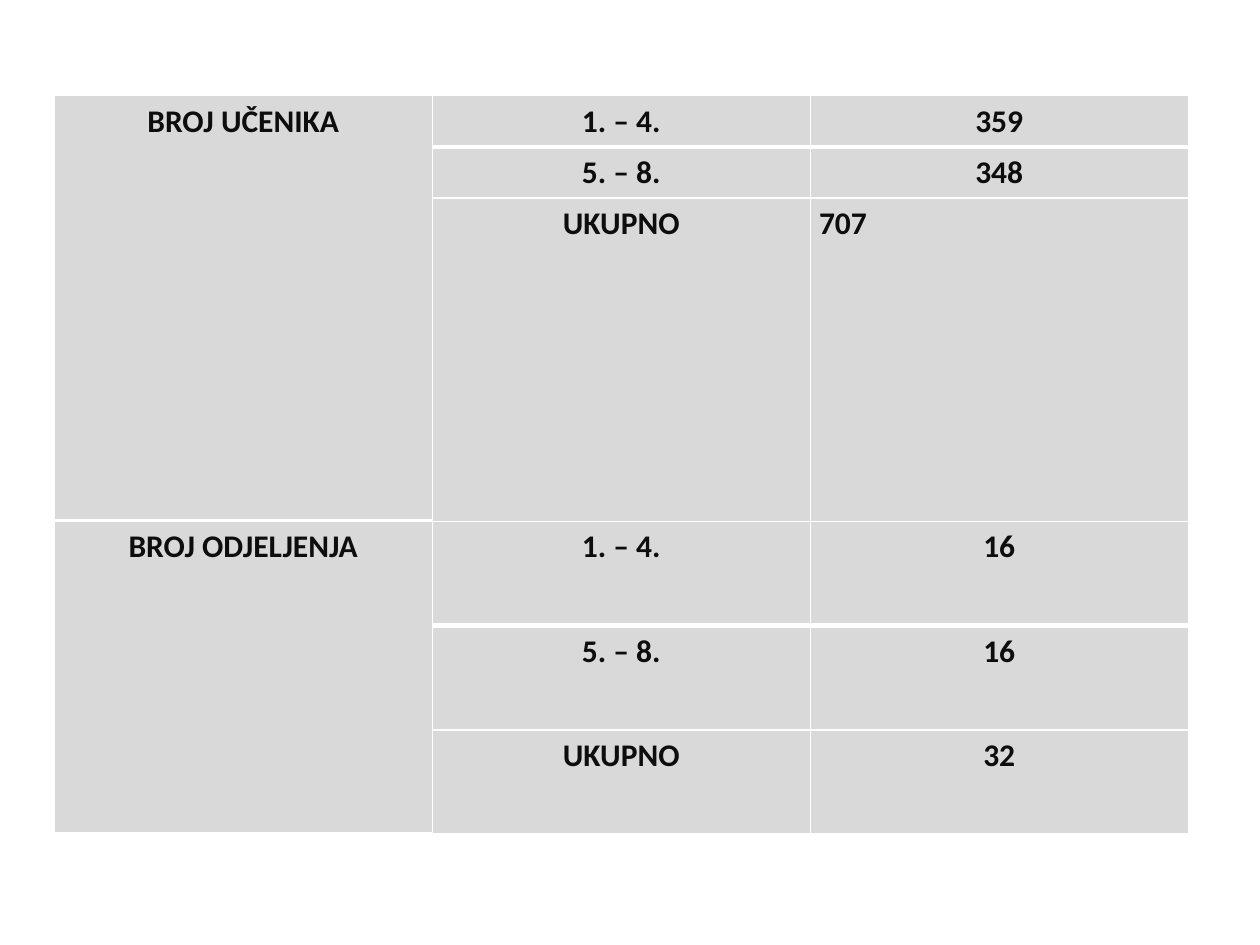
"""Build a slide with two tables of pupil and class counts."""
from dataclasses import dataclass

from lxml import etree
from pptx import Presentation, util as u
from pptx.dml.color import RGBColor
from pptx.enum import text
from pptx.oxml import ns


@dataclass(frozen=True)
class Theme:
    font: str = "Calibri"
    size: float = 18
    ink: str = "0D0D0D"
    cell: str = "D9D9D9"
    border: str = "FFFFFF"
    thin: float = 0.96
    thick: float = 3


THEME = Theme()
LEFT, COLUMN_WIDTH = 31, 216
GRADES = ("1. – 4.", "5. – 8.", "UKUPNO")
CENTER, START = text.PP_ALIGN.CENTER, text.PP_ALIGN.LEFT


def set_values(target, values):
    for name, value in values.items():
        setattr(target, name, value)


def add_borders(cell, widths):
    properties = cell._tc.get_or_add_tcPr()
    for side, width in widths.items():
        line = etree.SubElement(properties, ns.qn(f"a:ln{side}"), w=str(int(u.Pt(width))))
        fill = etree.SubElement(line, ns.qn("a:solidFill"))
        etree.SubElement(fill, ns.qn("a:srgbClr"), val=THEME.border)


def style_cell(cell, row):
    set_values(cell, {
        "margin_left": u.Pt(5), "margin_right": u.Pt(5),
        "margin_top": u.Pt(3.6), "margin_bottom": u.Pt(3.6),
    })
    add_borders(cell, {
        "L": THEME.thin, "R": THEME.thin,
        "T": THEME.thick if row == 1 else THEME.thin,
        "B": THEME.thick if row == 0 else THEME.thin,
    })
    cell.fill.solid()
    cell.fill.fore_color.rgb = RGBColor.from_string(THEME.cell)


def write_cell(cell, words, alignment=CENTER):
    paragraph = cell.text_frame.paragraphs[0]
    paragraph.alignment = alignment
    run = paragraph.add_run()
    run.text = words
    set_values(run.font, {"name": THEME.font, "size": u.Pt(THEME.size), "bold": True})
    run.font.color.rgb = RGBColor.from_string(THEME.ink)


def add_count_table(slide, top, heights, title, counts, total_alignment=CENTER):
    shape = slide.shapes.add_table(
        len(heights), 3, u.Pt(LEFT), u.Pt(top), u.Pt(3 * COLUMN_WIDTH), u.Pt(sum(heights)))
    table = shape.table
    set_values(table, {"first_row": False, "horz_banding": False})
    for column in table.columns:
        column.width = u.Pt(COLUMN_WIDTH)
    for row, height in enumerate(heights):
        table.rows[row].height = u.Pt(height)
        for column in range(3):
            style_cell(table.cell(row, column), row)
        write_cell(table.cell(row, 1), GRADES[row])
        alignment = total_alignment if row == len(heights) - 1 else CENTER
        write_cell(table.cell(row, 2), counts[row], alignment)
    table.cell(0, 0).merge(table.cell(len(heights) - 1, 0))
    write_cell(table.cell(0, 0), title)


def main():
    presentation = Presentation()
    set_values(presentation, {"slide_width": u.Pt(720), "slide_height": u.Pt(540)})
    slide = presentation.slides.add_slide(presentation.slide_layouts[6])
    add_count_table(slide, 54.7, (29.2, 29.2, 185), "BROJ UČENIKA",
                    ("359", "348", "707"), START)
    add_count_table(slide, 298.1, (59.5,) * 3, "BROJ ODJELJENJA", ("16", "16", "32"))
    presentation.save("out.pptx")


if __name__ == "__main__":
    main()
